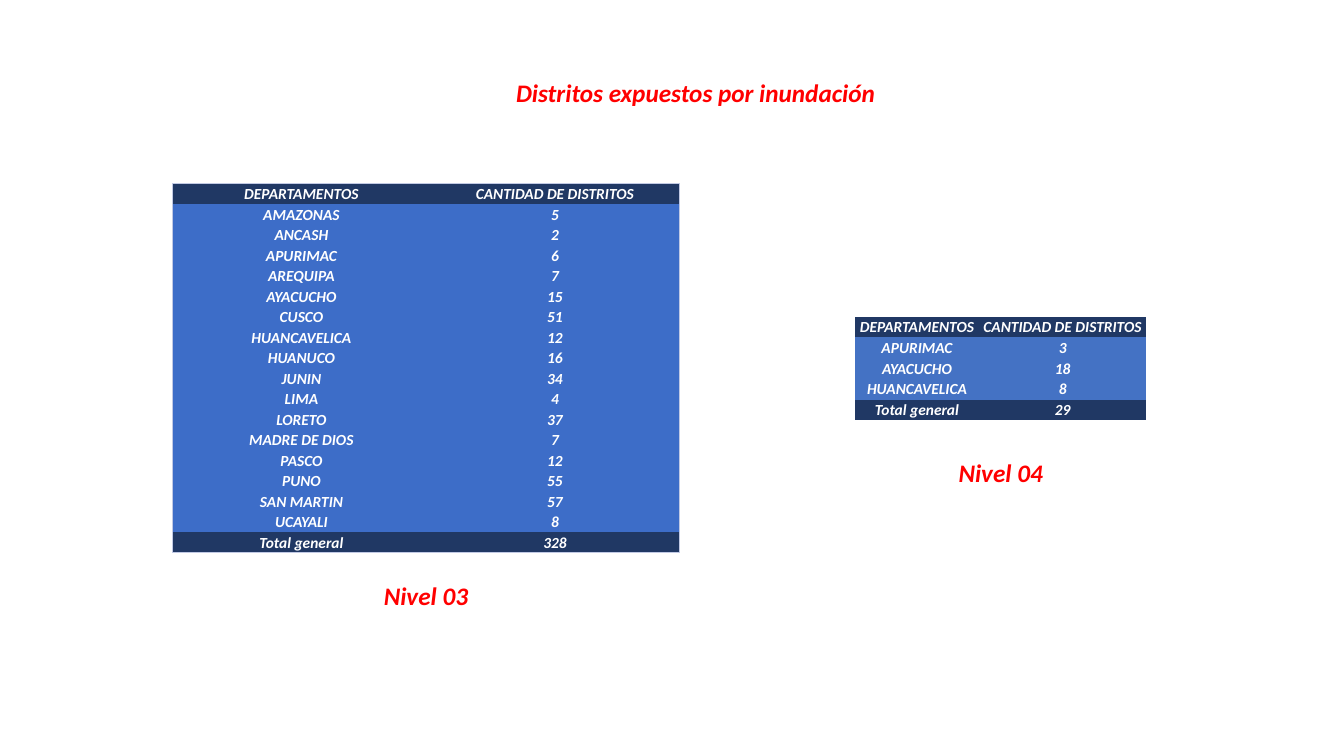
from lxml import etree
from pptx import Presentation
from pptx.dml.color import RGBColor
from pptx.enum.text import MSO_ANCHOR, PP_ALIGN
from pptx.oxml.ns import qn
from pptx.util import Inches, Pt

COLORS = {"red": "FF0000", "white": "FFFFFF", "navy": "203864",
          "level3": "3D6DC8", "level4": "4472C4", "border": "C1C9E4"}
NO_GRID_STYLE = "{2D5ABB26-0587-4C30-8999-92F81FD0307C}"
HEADER = ("DEPARTAMENTOS", "CANTIDAD DE DISTRITOS")

level3_rows = [
    HEADER, ("AMAZONAS", 5), ("ANCASH", 2), ("APURIMAC", 6), ("AREQUIPA", 7),
    ("AYACUCHO", 15), ("CUSCO", 51), ("HUANCAVELICA", 12), ("HUANUCO", 16),
    ("JUNIN", 34), ("LIMA", 4), ("LORETO", 37), ("MADRE DE DIOS", 7),
    ("PASCO", 12), ("PUNO", 55), ("SAN MARTIN", 57), ("UCAYALI", 8),
    ("Total general", 328),
]
level4_rows = [HEADER, ("APURIMAC", 3), ("AYACUCHO", 18), ("HUANCAVELICA", 8),
               ("Total general", 29)]


def write_centered(frame, text, size, color):
    """Put one bold italic centred line into a text frame."""
    frame.text = text
    line = frame.paragraphs[0]
    line.alignment = PP_ALIGN.CENTER
    font = line.runs[0].font
    font.name, font.size = "Calibri", Pt(size)
    font.bold = font.italic = True
    font.color.rgb = RGBColor.from_string(COLORS[color])


def add_border(cell, side):
    """Draw a thin line on one side of a cell: lnL, lnR, lnT or lnB."""
    line = etree.SubElement(cell._tc.get_or_add_tcPr(), qn("a:" + side), w=str(Pt(0.5)))
    fill = etree.SubElement(line, qn("a:solidFill"))
    etree.SubElement(fill, qn("a:srgbClr"), val=COLORS["border"])


prs = Presentation()
prs.slide_width, prs.slide_height = Inches(13.33), Inches(7.5)
slide = prs.slides.add_slide(prs.slide_layouts[5])

heading = slide.shapes.title
heading.left, heading.top = Inches(5), Inches(0.72)
heading.width, heading.height = Inches(3.8), Inches(0.4)
heading.text_frame.word_wrap = False
heading.text_frame.vertical_anchor = MSO_ANCHOR.TOP
write_centered(heading.text_frame, "Distritos expuestos por inundación", 18, "red")

# rows, left, top, column widths, row height, body colour, outlined
levels = [
    (level3_rows, 1.71, 1.82, (2.56, 2.47), 3.67 / 18, "level3", True),
    (level4_rows, 8.48, 3.14, (1.23, 1.66), 1.03 / 5, "level4", False),
]
for rows, left, top, widths, row_height, body_color, outlined in levels:
    last = len(rows) - 1
    table = slide.shapes.add_table(
        len(rows), 2, Inches(left), Inches(top),
        Inches(sum(widths)), Inches(row_height * len(rows))).table
    table.first_row = table.horz_banding = False
    table._tbl.tblPr.find(qn("a:tableStyleId")).text = NO_GRID_STYLE
    for column, width in zip(table.columns, widths):
        column.width = Inches(width)
    for r, values in enumerate(rows):
        table.rows[r].height = Inches(row_height)
        for c, value in enumerate(values):
            cell = table.cell(r, c)
            cell.margin_left = cell.margin_right = cell.margin_top = Inches(0.01)
            cell.margin_bottom = 0
            cell.vertical_anchor = MSO_ANCHOR.MIDDLE
            write_centered(cell.text_frame, str(value), 11, "white")
            if outlined:
                add_border(cell, "lnR" if c else "lnL")
                if r == 0:
                    add_border(cell, "lnT")
                if r == last:
                    add_border(cell, "lnB")
            cell.fill.solid()
            color = "navy" if r in (0, last) else body_color
            cell.fill.fore_color.rgb = RGBColor.from_string(COLORS[color])

for caption, left, top in [("Nivel 03", 3.37, 5.71), ("Nivel 04", 9.07, 4.49)]:
    level_label = slide.shapes.add_textbox(
        Inches(left), Inches(top), Inches(1.71), Inches(0.4))
    level_label.text_frame.word_wrap = True
    write_centered(level_label.text_frame, caption, 18, "red")

prs.save("out.pptx")
